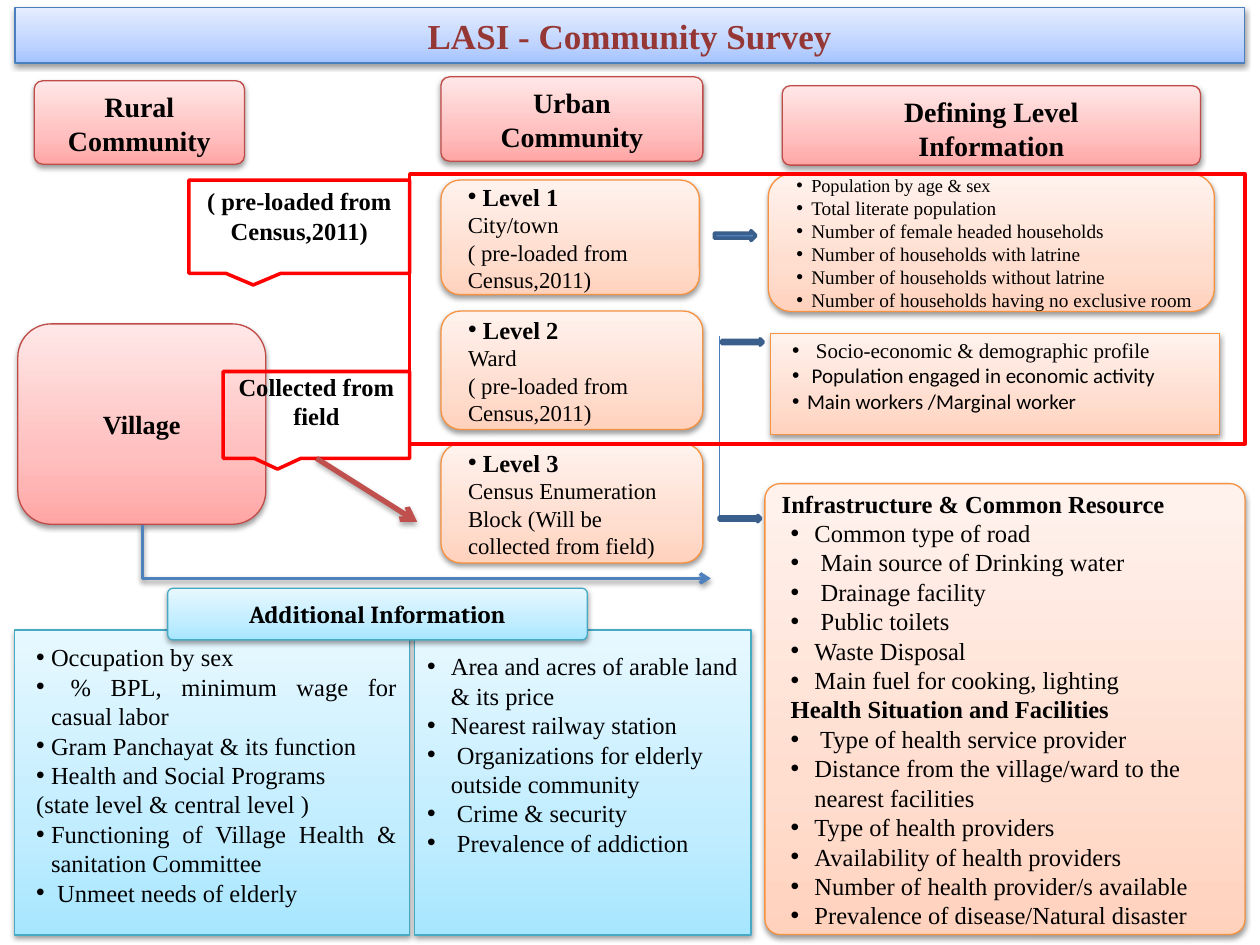
from copy import deepcopy

from lxml.etree import SubElement
from pptx import Presentation
from pptx.dml.color import RGBColor
from pptx.enum.shapes import MSO_CONNECTOR, MSO_SHAPE
from pptx.enum.text import MSO_ANCHOR, PP_ALIGN
from pptx.oxml.ns import qn
from pptx.util import Cm, Pt

BLACK = RGBColor(0x00, 0x00, 0x00)
RED = RGBColor(0xFF, 0x00, 0x00)
BRICK = RGBColor(0xC0, 0x50, 0x4D)
MAROON = RGBColor(0x95, 0x37, 0x35)
BLUE = RGBColor(0x4F, 0x81, 0xBD)
NAVY = RGBColor(0x3A, 0x5F, 0x8C)
STEEL = RGBColor(0x4B, 0x7E, 0xBC)
AMBER = RGBColor(0xE4, 0x6C, 0x0A)

# Line colour, then gradient colours from bottom to top
ORANGE_SKIN = (RGBColor(0xF6, 0x92, 0x40), RGBColor(0xFF, 0xD2, 0xBD),
               RGBColor(0xFF, 0xDE, 0xD0), RGBColor(0xFF, 0xF2, 0xED))
PINK_SKIN = (RGBColor(0xBF, 0x4C, 0x48), RGBColor(0xFF, 0xA6, 0xA5),
             RGBColor(0xFF, 0xC0, 0xBF), RGBColor(0xFF, 0xE7, 0xE7))
AQUA_SKIN = (RGBColor(0x46, 0xAA, 0xC5), RGBColor(0xA7, 0xE6, 0xFF),
             RGBColor(0xC1, 0xED, 0xFF), RGBColor(0xE7, 0xF8, 0xFF))
TITLE_SKIN = (STEEL, RGBColor(0xA4, 0xC4, 0xFF),
              RGBColor(0xBF, 0xD4, 0xFF), RGBColor(0xE6, 0xEE, 0xFF))

# Left margin and first-line indent in cm, and whether a bullet is shown
PLAIN = (0, 0, False)
FLUSH = (0.18, 0, False)
BULLET = (0.48, -0.3, True)
HANGING = (0.48, -0.48, True)
WIDE = (0.66, -0.48, True)


def item(text, layout=PLAIN, align=PP_ALIGN.LEFT, **font):
    return text, layout, align, font


def items(texts, layout, align=PP_ALIGN.LEFT, **font):
    return [item(text, layout, align, **font) for text in texts]


def centred(*texts, **font):
    return items(texts, PLAIN, PP_ALIGN.CENTER, bold=True, **font)


def apply(target, values):
    for name, value in values.items():
        setattr(target, name, value)


class SurveySlide:
    FONT = {"name": "Times New Roman", "size": 14, "bold": False}

    def __init__(self, deck):
        self.page = deck.slides.add_slide(deck.slide_layouts[5])

    def shadow(self, effects, alpha=38000):
        outer = SubElement(effects, qn("a:outerShdw"), blurRad="40000",
                           dist="20000", dir="5400000", rotWithShape="0")
        colour = SubElement(outer, qn("a:srgbClr"), val="000000")
        SubElement(colour, qn("a:alpha"), val=str(alpha))

    def skin(self, shape, colours):
        """Give a shape its line, three-stop gradient and soft shadow."""
        line, *stops = colours
        shape.fill.gradient()
        shape.fill.gradient_angle = 90
        stop_list = shape._element.spPr.find(qn("a:gradFill")).find(qn("a:gsLst"))
        stop_list.insert(1, deepcopy(stop_list[0]))
        for stop, colour, position in zip(shape.fill.gradient_stops, stops, (0, 0.35, 1)):
            stop.color.rgb = colour
            stop.position = position
        self.outline(shape, line, 0.75)
        shape.shadow.inherit = False
        self.shadow(shape._element.spPr.find(qn("a:effectLst")))

    def outline(self, shape, colour, width):
        shape.line.color.rgb = colour
        shape.line.width = Pt(width)

    def text(self, shape, paragraphs, anchor=MSO_ANCHOR.MIDDLE, top=0.13):
        frame = shape.text_frame
        apply(frame, {"word_wrap": True, "vertical_anchor": anchor, "margin_top": Cm(top)})
        for number, (words, layout, align, font) in enumerate(paragraphs):
            para = frame.add_paragraph() if number else frame.paragraphs[0]
            para.text = words
            para.alignment = align
            margin, indent, bulleted = layout
            properties = para._p.get_or_add_pPr()
            properties.set("marL", str(Cm(margin)))
            properties.set("indent", str(Cm(indent)))
            if bulleted:
                SubElement(properties, qn("a:buFont"), typeface="Arial")
                SubElement(properties, qn("a:buChar"), char="•")
            style = {**self.FONT, **font}
            colour = style.pop("colour", BLACK)
            style["size"] = Pt(style["size"])
            for span in para.runs:
                apply(span.font, style)
                span.font.color.rgb = colour

    def title(self, words, place):
        box = self.page.shapes.title
        apply(box, dict(zip(("left", "top", "width", "height"), map(Cm, place))))
        self.skin(box, TITLE_SKIN)
        self.text(box, centred(words, size=20, colour=MAROON))

    def card(self, place, colours, paragraphs, corner=None, **text_format):
        box = self.page.shapes.add_shape(MSO_SHAPE.ROUNDED_RECTANGLE, *map(Cm, place))
        if corner is not None:
            box.adjustments[0] = corner
        self.skin(box, colours)
        self.text(box, paragraphs, **text_format)

    def red_outline(self, kind, place):
        box = self.page.shapes.add_shape(kind, *map(Cm, place))
        box.shadow.inherit = False
        box.fill.background()
        self.outline(box, RED, 2)
        return box

    def callout(self, place, words, top):
        box = self.red_outline(MSO_SHAPE.RECTANGULAR_CALLOUT, place)
        self.text(box, centred(words), MSO_ANCHOR.TOP, top)
        return box

    def block_arrow(self, left, top, height, colour=BLUE):
        arrow = self.page.shapes.add_shape(
            MSO_SHAPE.RIGHT_ARROW, Cm(left), Cm(top), Cm(0.84), Cm(height))
        arrow.shadow.inherit = False
        arrow.fill.solid()
        arrow.fill.fore_color.rgb = colour
        self.outline(arrow, NAVY, 2)

    def connector(self, ends, colour, width, arrow=True, alpha=38000):
        line = self.page.shapes.add_connector(MSO_CONNECTOR.STRAIGHT, *map(Cm, ends))
        self.outline(line, colour, width)
        properties = line._element.spPr
        effects = SubElement(properties, qn("a:effectLst"))
        if arrow:
            SubElement(properties.find(qn("a:ln")), qn("a:tailEnd"), type="arrow")
            self.shadow(effects, alpha)
        return line

    def elbow(self, start_x, start_y, end_x, end_y, colour, width):
        """Draw an arrow that goes down and then right."""
        line = self.connector((start_x, start_y, end_x, end_y), colour, width)
        across, down = end_x - start_x, end_y - start_y
        apply(line, {"left": Cm((start_x + end_x - down) / 2),
                     "top": Cm((start_y + end_y - across) / 2),
                     "width": Cm(down), "height": Cm(across)})
        properties = line._element.spPr
        properties.find(qn("a:prstGeom")).set("prst", "bentConnector2")
        frame = properties.find(qn("a:xfrm"))
        frame.set("rot", "16200000")
        frame.set("flipH", "1")


def main():
    deck = Presentation()
    deck.slide_width, deck.slide_height = Cm(25.4), Cm(19.05)
    slide = SurveySlide(deck)
    slide.title("LASI - Community Survey", (0.3, 0.15, 24.79, 1.12))

    slide.card((15.49, 3.51, 8.99, 2.77), ORANGE_SKIN, [
        item("Population by age & sex", BULLET, size=10.5),
        *items(["Total literate population", "Number of female headed households",
                "Number of households with latrine", "Number of households without latrine",
                "Number of households having no exclusive room"], BULLET, size=11)])
    slide.card((15.54, 6.73, 9.04, 2.03), ORANGE_SKIN, [
        item("Socio-economic & demographic profile", WIDE, size=12),
        *items([" Population engaged in economic activity", "Main workers /Marginal worker"],
               BULLET, size=12, name="Calibri")], corner=0, anchor=MSO_ANCHOR.TOP, top=0.08)
    slide.card((15.42, 9.75, 9.68, 9.09), ORANGE_SKIN, [
        item("Infrastructure & Common Resource", bold=True),
        *items(["Common type of road", " Main source of Drinking water", " Drainage facility",
                " Public toilets", "Waste Disposal", "Main fuel for cooking, lighting"], WIDE),
        item("Health Situation and Facilities", FLUSH, bold=True),
        *items([" Type of health service provider",
                "Distance from the village/ward to the nearest facilities",
                "Type of health providers", "Availability of health providers",
                "Number of health provider/s available",
                "Prevalence of disease/Natural disaster"], WIDE)], corner=0.034)

    justify = PP_ALIGN.JUSTIFY
    slide.card((0.3, 12.7, 7.95, 6.15), AQUA_SKIN, [
        *items(["Occupation by sex", " % BPL, minimum wage for casual labor",
                "Gram Panchayat & its function", "Health and Social Programs"], BULLET, justify),
        item("(state level & central level )", FLUSH, justify),
        *items(["Functioning of Village Health & sanitation Committee",
                " Unmeet needs of elderly"], BULLET, justify)],
        corner=0, anchor=MSO_ANCHOR.TOP, top=0.25)
    slide.card((8.36, 12.7, 6.78, 6.15), AQUA_SKIN, items([
        "Area and acres of arable land & its price", "Nearest railway station",
        " Organizations for elderly outside community", " Crime & security",
        " Prevalence of addiction"], HANGING), corner=0, anchor=MSO_ANCHOR.TOP, top=0.43)

    preloaded = "( pre-loaded from Census,2011)"
    levels = [((8.89, 3.63, 5.21, 2.31), ["City/town", preloaded]),
              ((8.89, 6.27, 5.28, 2.39), ["Ward", preloaded]),
              ((8.89, 8.94, 5.28, 2.41),
               ["Census Enumeration Block (Will be collected from field)"])]
    for number, (place, details) in enumerate(levels, 1):
        slide.card(place, ORANGE_SKIN, [item(f"Level {number}", BULLET, bold=True),
                                        *items(details, FLUSH, size=13)])

    headings = [((0.69, 1.63, 4.24, 1.68), ["Rural Community"]),
                ((8.89, 1.55, 5.28, 1.7), ["Urban", "Community"]),
                ((15.77, 1.73, 8.43, 1.6), ["Defining Level", "Information"])]
    for place, lines in headings:
        slide.card(place, PINK_SKIN, centred(*lines, size=16),
                   corner=0.1, anchor=MSO_ANCHOR.TOP)

    slide.card((0.36, 6.53, 5, 4.04), PINK_SKIN, centred("Village", size=15))
    slide.block_arrow(14.55, 6.83, 0.13, AMBER)
    slide.connector((14.5, 6.78, 14.5, 10.44), STEEL, 0.75, arrow=False)
    slide.block_arrow(14.5, 10.39, 0.13)
    slide.card((3.38, 11.86, 8.46, 1.04), AQUA_SKIN,
               centred("Additional Information", name="Cambria"), corner=0.1)
    slide.elbow(2.87, 10.59, 14.33, 11.66, BLUE, 2)
    slide.block_arrow(14.4, 4.65, 0.2)

    slide.red_outline(MSO_SHAPE.RECTANGLE, (8.26, 3.51, 16.84, 5.44))
    slide.callout((3.81, 3.63, 4.45, 1.88), preloaded, 0.13)
    field_note = slide.callout((4.5, 7.49, 3.76, 1.75), "Collected from field", 0)
    pointer = slide.connector((6.38, 9.24, 8.41, 10.52), BRICK, 3, alpha=35000)
    pointer.begin_connect(field_note, 2)

    deck.save("out.pptx")


if __name__ == "__main__":
    main()
